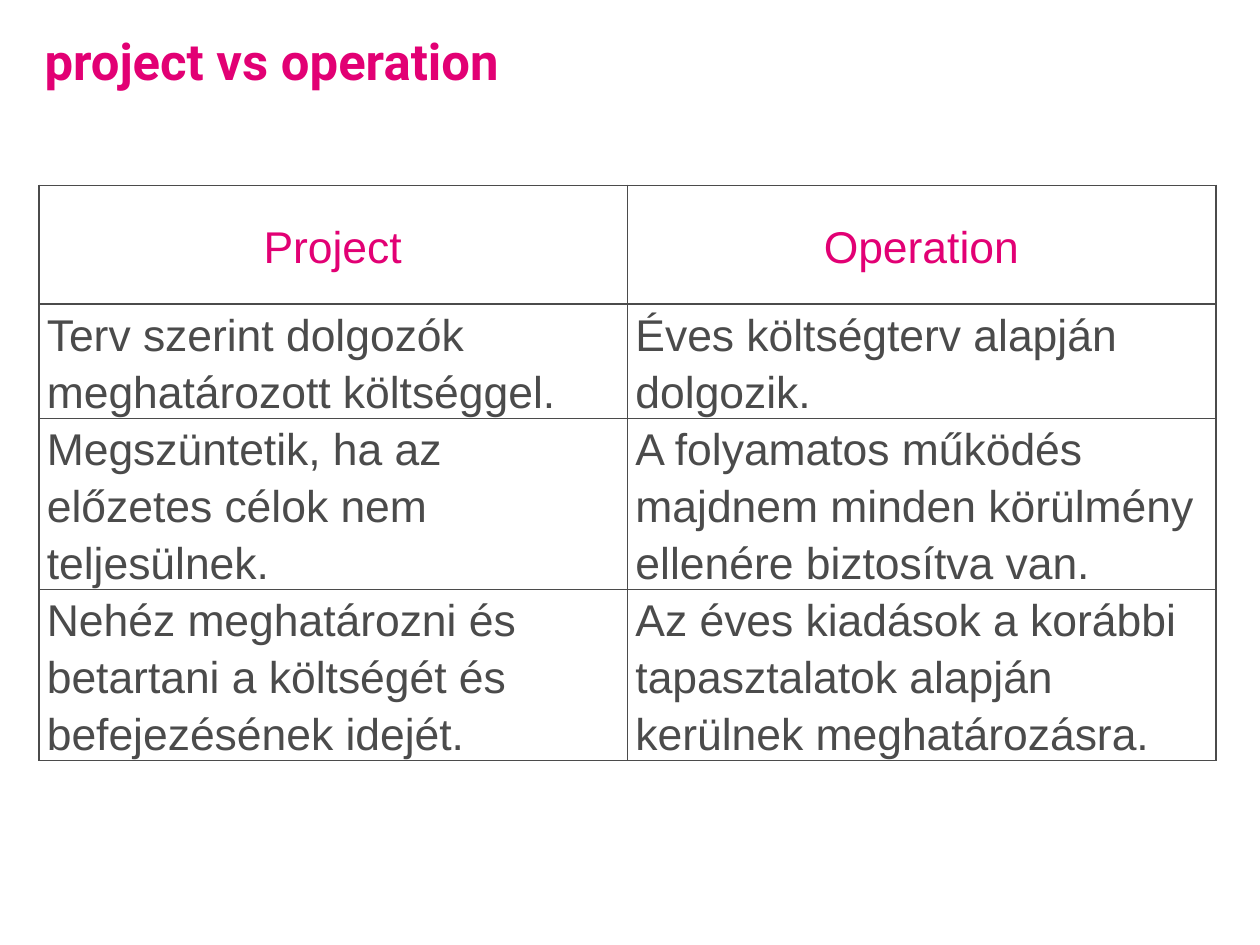
from lxml import etree
from pptx import Presentation
from pptx import util as u
from pptx.dml import color
from pptx.enum import text
from pptx.oxml import ns

# Content
TITLE = "project vs operation"
ROWS = [
    ("Project", "Operation"),
    ("Terv szerint dolgozók meghatározott költséggel.",
     "Éves költségterv alapján dolgozik."),
    ("Megszüntetik, ha az előzetes célok nem teljesülnek.",
     "A folyamatos működés majdnem minden körülmény ellenére biztosítva van."),
    ("Nehéz meghatározni és betartani a költségét és befejezésének idejét.",
     "Az éves kiadások a korábbi tapasztalatok alapján kerülnek meghatározásra."),
]

# Formats
MAGENTA, GREY, WHITE = "E20074", "4B4B4B", "FFFFFF"
TITLE_FONT = {"name": "Roboto", "size": u.Pt(32), "bold": True}
CELL_FONT = {"name": "Arial", "size": u.Pt(28), "bold": False}
TITLE_FRAME = {"margin_left": 0, "margin_right": 0, "margin_top": 0,
               "margin_bottom": 0, "word_wrap": True,
               "vertical_anchor": text.MSO_ANCHOR.TOP}
CELL_MARGINS = {"margin_left": u.Inches(0.07), "margin_right": u.Inches(0.08),
                "margin_top": 0, "margin_bottom": 0}
HEADER_HEIGHT, BODY_HEIGHT, COLUMN_WIDTH = 1.04, 1, 5.15


def rgb(value):
    return color.RGBColor.from_string(value)


def apply(target, values):
    for name, value in values.items():
        setattr(target, name, value)


def write(frame, words, font, ink, **layout):
    para = frame.paragraphs[0]
    apply(para, layout)
    span = para.add_run()
    span.text = words
    apply(span.font, font)
    span.font.color.rgb = rgb(ink)


def add_borders(cell, ink, points):
    properties = cell._tc.get_or_add_tcPr()
    for side in ("lnL", "lnR", "lnT", "lnB"):
        line = etree.SubElement(properties, ns.qn(f"a:{side}"), w=str(u.Pt(points)))
        fill = etree.SubElement(line, ns.qn("a:solidFill"))
        etree.SubElement(fill, ns.qn("a:srgbClr"), val=ink)


# Slide of 28 by 21 cm with a title only
deck = Presentation()
deck.slide_width, deck.slide_height = u.Cm(28), u.Cm(21)
page = deck.slides.add_slide(deck.slide_layouts[5])
page.background.fill.solid()
page.background.fill.fore_color.rgb = rgb(WHITE)

# Title
title = page.shapes.title
apply(title, {"left": u.Inches(0.39), "top": u.Inches(0.32),
              "width": u.Inches(10.24), "height": u.Inches(0.64)})
apply(title.text_frame, TITLE_FRAME)
write(title.text_frame, TITLE, TITLE_FONT, MAGENTA,
      alignment=text.PP_ALIGN.LEFT, line_spacing=0.9)

# Comparison table
heights = [HEADER_HEIGHT] + [BODY_HEIGHT] * (len(ROWS) - 1)
columns = len(ROWS[0])
table = page.shapes.add_table(
    len(ROWS), columns, u.Inches(0.34), u.Inches(1.62),
    u.Inches(COLUMN_WIDTH * columns), u.Inches(sum(heights))).table
table.horz_banding = False
for column in table.columns:
    column.width = u.Inches(COLUMN_WIDTH)

for row_index, (entries, height) in enumerate(zip(ROWS, heights)):
    table.rows[row_index].height = u.Inches(height)
    header = row_index == 0
    for column_index, words in enumerate(entries):
        cell = table.cell(row_index, column_index)
        apply(cell, CELL_MARGINS)
        cell.vertical_anchor = text.MSO_ANCHOR.MIDDLE if header else text.MSO_ANCHOR.TOP
        add_borders(cell, GREY, 1)
        cell.fill.solid()
        cell.fill.fore_color.rgb = rgb(WHITE)
        write(cell.text_frame, words, CELL_FONT, MAGENTA if header else GREY,
              alignment=text.PP_ALIGN.CENTER if header else text.PP_ALIGN.LEFT,
              line_spacing=1.15)

deck.save("out.pptx")
